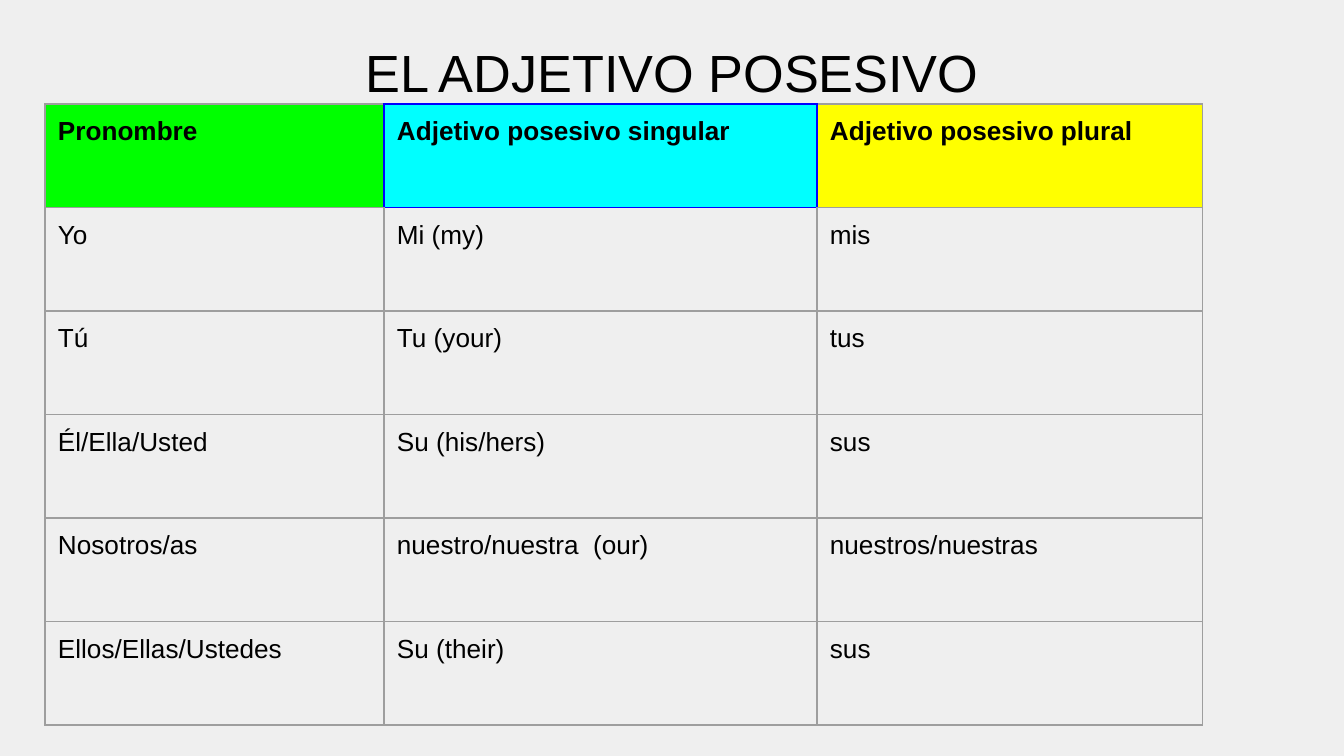
import pptx
import pptx.dml.color
import pptx.enum.text
import pptx.oxml
import pptx.oxml.ns
import pptx.util

EMU_PER_PX = 9144000 / 1344
FONT = "Arial"
GRID_COLOUR = "9E9E9E"
ACCENT_COLOUR = "0000FF"
ACCENT_CELL = (0, 1)
HEADER_FILLS = ["00FF00", "00FFFF", "FFFF00"]
COLUMN_WIDTHS = [339, 433, 386]
ROWS = [
    ["Pronombre", "Adjetivo posesivo singular", "Adjetivo posesivo plural"],
    ["Yo", "Mi (my)", "mis"],
    ["Tú", "Tu (your)", "tus"],
    ["Él/Ella/Usted", "Su (his/hers)", "sus"],
    ["Nosotros/as", "nuestro/nuestra  (our)", "nuestros/nuestras"],
    ["Ellos/Ellas/Ustedes", "Su (their)", "sus"],
]
# Each edge with the step (row, column) to the cell on its other side.
EDGES = {"lnL": (0, -1), "lnR": (0, 1), "lnT": (-1, 0), "lnB": (1, 0)}


def px(length):
    return pptx.util.Emu(round(length * EMU_PER_PX))


def colour(hex_string):
    return pptx.dml.color.RGBColor.from_string(hex_string)


def format_text(para, size, bold=False):
    for span in para.runs:
        span.font.name = FONT
        span.font.size = pptx.util.Pt(size)
        span.font.bold = bold
        span.font.color.rgb = colour("000000")


def set_margins(holder):
    """Give a text frame or a table cell the same inset on all sides."""
    holder.margin_left = holder.margin_right = px(13)
    holder.margin_top = holder.margin_bottom = px(13)


def edge_colour(row, column, step):
    """Colour an edge that borders the accent cell, but keep its outer bottom grey."""
    beyond = (row + step[0], column + step[1])
    return ACCENT_COLOUR if ACCENT_CELL in ((row, column), beyond) else GRID_COLOUR


def set_borders(cell, row, column):
    properties = cell._tc.get_or_add_tcPr()
    for index, (tag, step) in enumerate(EDGES.items()):
        line = pptx.oxml.parse_xml(
            f'<a:{tag} {pptx.oxml.ns.nsdecls("a")} w="{pptx.util.Pt(0.75)}">'
            f'<a:solidFill><a:srgbClr val="{edge_colour(row, column, step)}"/></a:solidFill>'
            f'<a:prstDash val="solid"/></a:{tag}>'
        )
        properties.insert(index, line)


def add_title(page, left, top, width, height):
    box = page.shapes.add_textbox(px(left), px(top), px(width), px(height))
    frame = box.text_frame
    frame.word_wrap = True
    set_margins(frame)
    frame.text = "EL ADJETIVO POSESIVO"
    para = frame.paragraphs[0]
    para.alignment = pptx.enum.text.PP_ALIGN.CENTER
    format_text(para, 28)


def add_possessives_table(page, left, top, width, height):
    table = page.shapes.add_table(
        len(ROWS), len(COLUMN_WIDTHS), px(left), px(top), px(width), px(height)
    ).table
    table.first_row = table.horz_banding = False
    for column, column_width in zip(table.columns, COLUMN_WIDTHS):
        column.width = px(column_width)
    for row in table.rows:
        row.height = px(height / len(ROWS))

    for row, texts in enumerate(ROWS):
        is_header = row == 0
        for column, text in enumerate(texts):
            cell = table.cell(row, column)
            cell.text_frame.text = text
            set_margins(cell)
            format_text(cell.text_frame.paragraphs[0], 14, is_header)
            if is_header:
                cell.fill.solid()
                cell.fill.fore_color.rgb = colour(HEADER_FILLS[column])
            else:
                cell.fill.background()
            set_borders(cell, row, column)


def main():
    deck = pptx.Presentation()
    deck.slide_width, deck.slide_height = px(1344), px(756)
    page = deck.slides.add_slide(deck.slide_layouts[6])
    page.background.fill.solid()
    page.background.fill.fore_color.rgb = colour("EFEFEF")
    add_title(page, 46, 27, 1252, 93)
    add_possessives_table(page, 45, 104, sum(COLUMN_WIDTHS), 621)
    deck.save("out.pptx")


if __name__ == "__main__":
    main()
